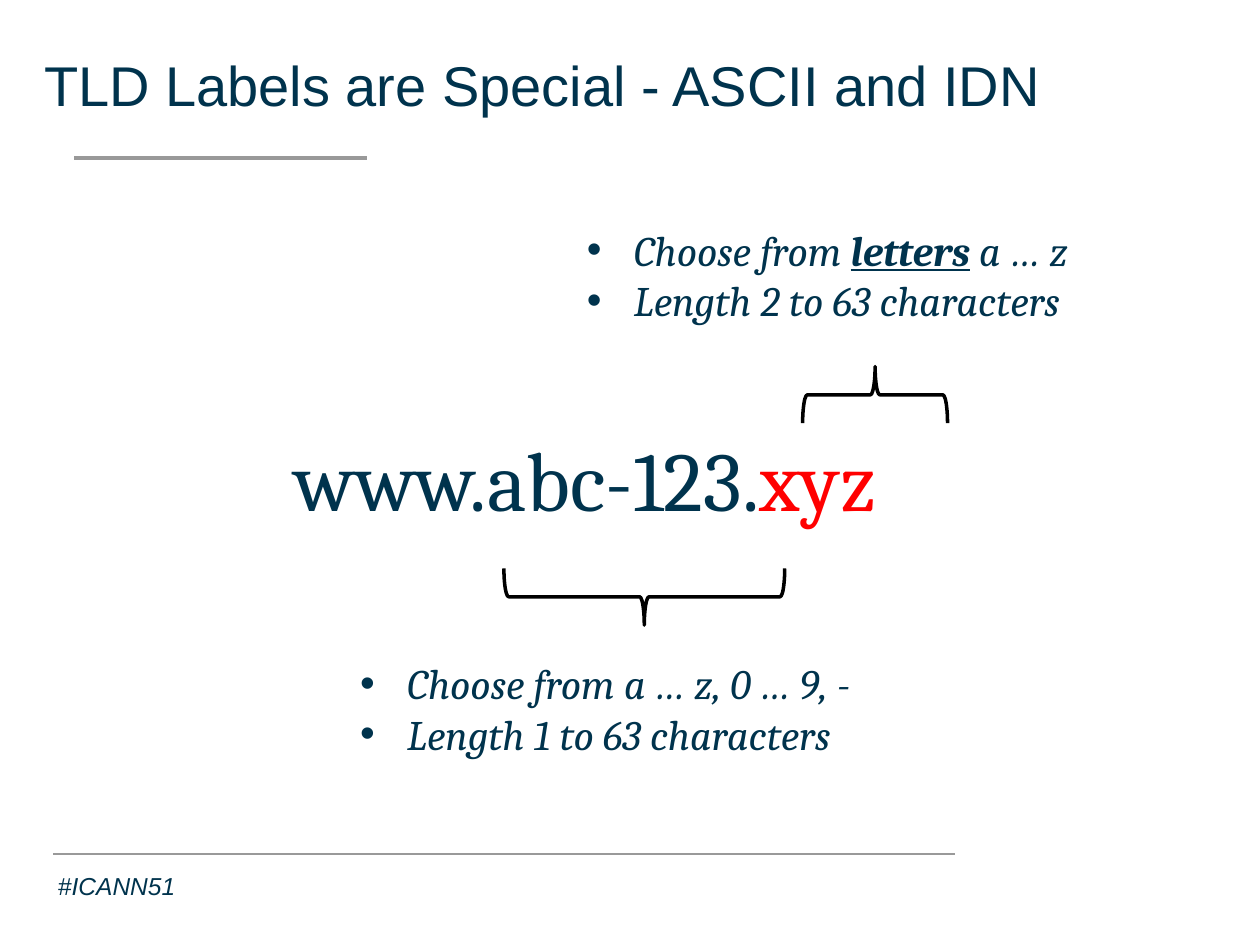
from lxml import etree
from pptx import Presentation
from pptx import util as u
from pptx.dml.color import RGBColor
from pptx.enum import shapes, text
from pptx.oxml.ns import qn

NAVY, RED, BLACK, GREY = "00334D", "FF0000", "000000", "999999"


def rgb(value):
    return RGBColor.from_string(value)


def add_box(slide, box, wrap=True):
    """Add a text box with narrow margins and return its text frame."""
    frame = slide.shapes.add_textbox(*map(u.Cm, box)).text_frame
    frame.word_wrap = wrap
    frame.margin_left = frame.margin_right = u.Cm(0.1)
    frame.margin_top = frame.margin_bottom = u.Cm(0.05)
    return frame


def add_run(paragraph, words, font, size, colour=NAVY, italic=False, strong=False):
    run = paragraph.add_run()
    run.text = words
    run.font.name, run.font.size = font, u.Pt(size)
    run.font.color.rgb = rgb(colour)
    run.font.italic, run.font.bold, run.font.underline = italic, strong, strong


def add_rule(slide, left, top, width, weight):
    rule = slide.shapes.add_connector(
        shapes.MSO_CONNECTOR.STRAIGHT,
        u.Cm(left), u.Cm(top), u.Cm(left + width), u.Cm(top))
    rule.line.color.rgb = rgb(GREY)
    rule.line.width = u.Pt(weight)
    etree.SubElement(rule.element.spPr, qn("a:effectLst"))


def add_title(slide, left, top, width, height):
    frame = add_box(slide, (left, top, width, height))
    frame.vertical_anchor = text.MSO_ANCHOR.MIDDLE
    frame.margin_left = u.Cm(0.48)
    add_run(frame.paragraphs[0], "TLD Labels are Special - ASCII and IDN", "Arial", 32)
    add_rule(slide, left + 1.09, top + 2.34, 5.89, 2)


def add_footer(slide, left, top, width):
    add_rule(slide, left, top, width, 1)
    frame = add_box(slide, (left, top + 0.28, 2.72, 0.71), wrap=False)
    add_run(frame.paragraphs[0], "#ICANN51", "Arial", 14, italic=True)


def add_domain(slide, left, top, width, height):
    paragraph = add_box(slide, (left, top, width, height), wrap=False).paragraphs[0]
    add_run(paragraph, "www.abc-123.", "Cambria", 48)
    add_run(paragraph, "xyz", "Cambria", 48, RED)


def add_brace(slide, left, top, width, height, rotation):
    """Fill a wide box with a left brace turned on its side."""
    middle_x, middle_y = left + width / 2, top + height / 2
    brace = slide.shapes.add_shape(
        shapes.MSO_SHAPE.LEFT_BRACE,
        u.Cm(middle_x - height / 2), u.Cm(middle_y - width / 2),
        u.Cm(height), u.Cm(width))
    brace.rotation = rotation
    brace.shadow.inherit = False
    brace.fill.background()
    brace.line.color.rgb = rgb(BLACK)
    brace.line.width = u.Pt(2)


def add_rules_list(slide, box, items):
    """Each item is a list of (words, strong) pairs."""
    frame = add_box(slide, box)
    for index, item in enumerate(items):
        paragraph = frame.add_paragraph() if index else frame.paragraphs[0]
        properties = paragraph._p.get_or_add_pPr()
        properties.set("marL", str(u.Cm(0.95)))
        properties.set("indent", str(-u.Cm(0.95)))
        etree.SubElement(properties, qn("a:buFont"), typeface="Arial")
        etree.SubElement(properties, qn("a:buChar"), char="•")
        for words, strong in item:
            add_run(paragraph, words, "Cambria", 24, italic=True, strong=strong)


def main():
    presentation = Presentation()
    presentation.slide_width, presentation.slide_height = u.Cm(25.4), u.Cm(19.05)
    slide = presentation.slides.add_slide(presentation.slide_layouts[6])
    add_title(slide, 0.41, 0.84, 24.16, 1.7)
    add_footer(slide, 1.07, 17.22, 18.19)
    add_domain(slide, 5.84, 8.56, 13.26, 2.16)
    add_brace(slide, 16.18, 7.39, 2.92, 1.14, 90)
    add_brace(slide, 10.16, 11.46, 5.66, 1.14, 270)
    add_rules_list(slide, (7.16, 13.21, 11.63, 2.16), [
        [("Choose from a … z, 0 … 9, -", False)],
        [("Length 1 to 63 characters", False)]])
    add_rules_list(slide, (11.73, 4.47, 11.84, 2.16), [
        [("Choose from ", False), ("letters", True), (" a … z", False)],
        [("Length 2 to 63 characters", False)]])
    presentation.save("out.pptx")


if __name__ == "__main__":
    main()
